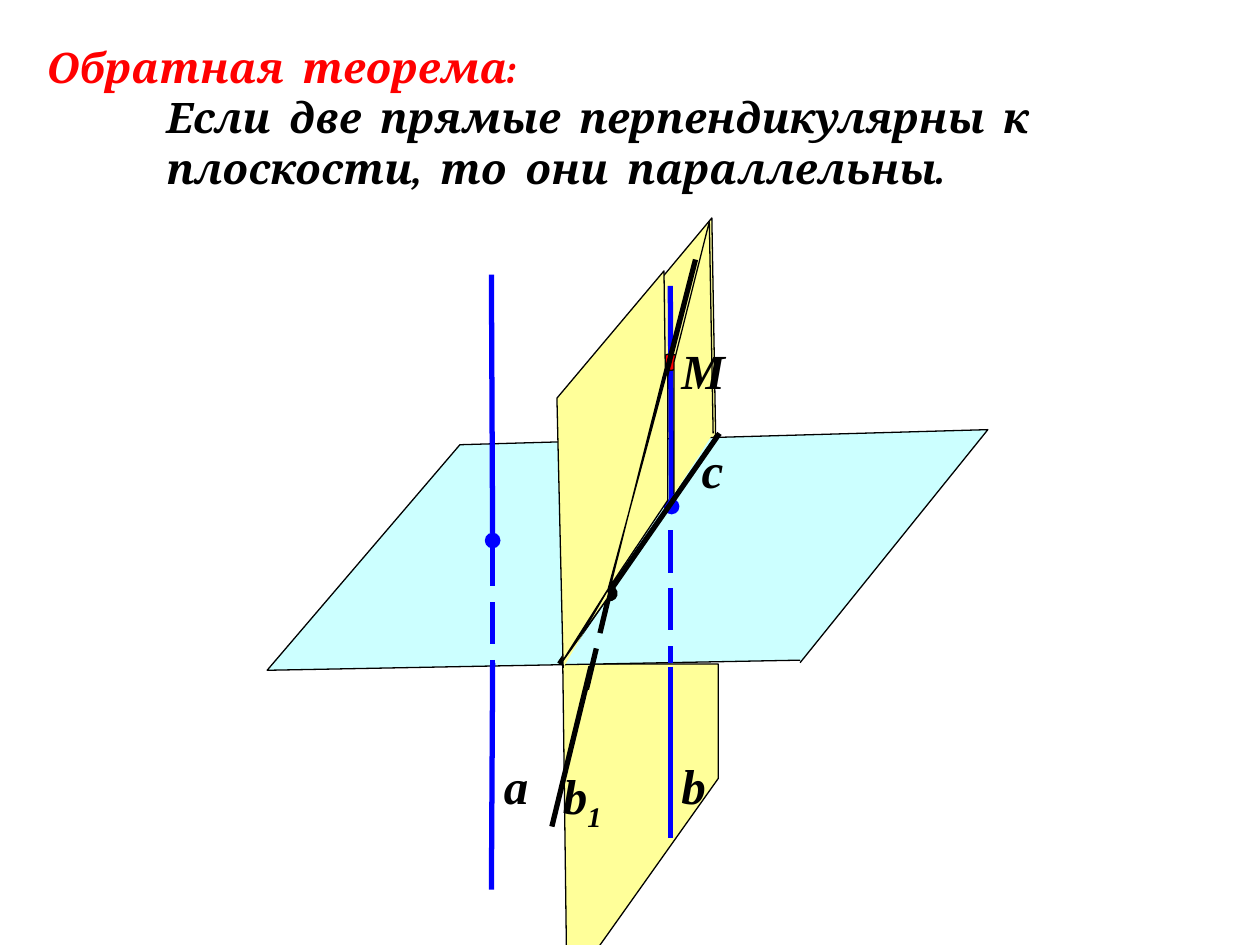
from dataclasses import dataclass

from lxml.etree import SubElement
from pptx import Presentation
from pptx.dml.color import RGBColor
from pptx.enum.dml import MSO_LINE
from pptx.enum.shapes import MSO_CONNECTOR, MSO_SHAPE
from pptx.enum.text import MSO_ANCHOR, MSO_AUTO_SIZE, PP_ALIGN
from pptx.oxml.ns import qn
from pptx.util import Inches, Pt

BLACK = RGBColor(0x00, 0x00, 0x00)
BLUE = RGBColor(0x00, 0x00, 0xFF)
RED = RGBColor(0xFF, 0x00, 0x00)
YELLOW = RGBColor(0xFF, 0xFF, 0x99)
CYAN = RGBColor(0xCC, 0xFF, 0xFF)

COLUMNS, ROWS = 1000, 750
CELL = Inches(10) // COLUMNS
WORD_GAP = 530

Point = tuple[int, int]


@dataclass
class Plane:
    corners: list[Point]
    color: RGBColor


@dataclass
class Line:
    start: Point
    end: Point
    color: RGBColor
    dashed: bool = False
    dotted_end: bool = False


@dataclass
class Marker:
    corner: Point
    size: Point
    color: RGBColor


@dataclass
class Label:
    corner: Point
    size: Point
    letter: str
    index: str = ""


FIGURE = [
    Plane([(447, 525), (568, 345), (565, 173), (444, 318), (450, 787),
           (570, 618), (570, 527), (445, 527)], YELLOW),
    Plane([(635, 524), (212, 532), (365, 353), (784, 341), (635, 526)], CYAN),
    Line((532, 227), (533, 402), BLUE, dotted_end=True),
    Line((532, 421), (532, 526), BLUE, dashed=True),
    Line((532, 529), (532, 665), BLUE),
    Line((390, 218), (391, 429), BLUE, dotted_end=True),
    Line((391, 526), (390, 706), BLUE),
    Line((391, 432), (391, 573), BLUE, dashed=True),
    Marker((524, 281), (16, 13), RED),
    Line((552, 206), (484, 471), BLACK, dotted_end=True),
    Line((484, 470), (465, 549), BLACK, dashed=True),
    Line((469, 529), (438, 656), BLACK),
    Line((571, 344), (444, 527), BLACK),
    Plane([(447, 530), (442, 316), (527, 215), (528, 292), (482, 475),
           (445, 527), (483, 467), (530, 397), (530, 293), (482, 470)], YELLOW),
    Plane([(566, 344), (563, 176), (535, 287), (535, 392)], YELLOW),
]

LABELS = [
    Label((390, 595), (40, 57), "а"),
    Label((531, 595), (40, 57), "b"),
    Label((437, 603), (53, 57), "b", "1"),
    Label((531, 265), (55, 57), "M"),
    Label((547, 344), (37, 57), "c"),
]


def cells(*counts: int) -> list[int]:
    return [count * CELL for count in counts]


def paint(shape, color: RGBColor) -> None:
    shape.shadow.inherit = False
    shape.fill.solid()
    shape.fill.fore_color.rgb = color
    shape.line.color.rgb = BLACK
    shape.line.width = Pt(0.75)


def add_plane(shapes, plane: Plane) -> None:
    first, *others = plane.corners
    outline = shapes.build_freeform(*first, scale=CELL)
    outline.add_line_segments(others, close=False)
    paint(outline.convert_to_shape(), plane.color)


def add_line(shapes, line: Line) -> None:
    segment = shapes.add_connector(
        MSO_CONNECTOR.STRAIGHT, *cells(*line.start, *line.end))
    segment.line.color.rgb = line.color
    segment.line.width = Pt(3)
    if line.dashed:
        segment.line.dash_style = MSO_LINE.LONG_DASH
    if line.dotted_end:
        SubElement(segment.line._get_or_add_ln(), qn("a:tailEnd"), type="oval")
    SubElement(segment._element.spPr, qn("a:effectLst"))


def add_marker(shapes, marker: Marker) -> None:
    paint(shapes.add_shape(
        MSO_SHAPE.OVAL, *cells(*marker.corner, *marker.size)), marker.color)


def add_run(paragraph, text: str, face: str, size: int, color: RGBColor):
    run = paragraph.add_run()
    run.text = text
    font = run.font
    font.name, font.size = face, Pt(size)
    font.bold = font.italic = True
    font.color.rgb = color
    return run


def add_label(shapes, label: Label) -> None:
    frame = shapes.add_textbox(*cells(*label.corner, *label.size)).text_frame
    frame.word_wrap = False
    frame.auto_size = MSO_AUTO_SIZE.SHAPE_TO_FIT_TEXT
    name = frame.paragraphs[0]
    add_run(name, label.letter, "Times New Roman", 28, BLACK)
    if label.index:
        index = add_run(name, label.index, "Times New Roman", 28, BLACK)
        index.font._element.set("baseline", "-25000")


def add_spaced_words(paragraph, text: str, color: RGBColor) -> None:
    for position, word in enumerate(text.split()):
        if position:
            gap = add_run(paragraph, " ", "Cambria", 24, color)
            gap.font._element.set("spc", str(WORD_GAP))
        add_run(paragraph, word, "Cambria", 24, color)


def write_theorem(title) -> None:
    title.left, title.top, title.width, title.height = cells(27, 28, 929, 130)
    frame = title.text_frame
    frame.word_wrap = True
    frame.auto_size = MSO_AUTO_SIZE.NONE
    frame.vertical_anchor = MSO_ANCHOR.TOP
    heading, statement = frame.paragraphs[0], frame.add_paragraph()
    for paragraph in (heading, statement):
        paragraph.alignment = PP_ALIGN.LEFT
        paragraph.line_spacing = 1.0
    margin = statement._p.get_or_add_pPr()
    margin.set("marL", str(95 * CELL))
    margin.set("indent", "0")
    add_spaced_words(heading, "Обратная теорема:", RED)
    add_spaced_words(
        statement,
        "Если две прямые перпендикулярны к плоскости, то они параллельны.",
        BLACK)


def main() -> None:
    deck = Presentation()
    deck.slide_width, deck.slide_height = cells(COLUMNS, ROWS)
    slide = deck.slides.add_slide(deck.slide_layouts[5])
    write_theorem(slide.shapes.title)
    draw = {Plane: add_plane, Line: add_line, Marker: add_marker}
    for part in FIGURE:
        draw[type(part)](slide.shapes, part)
    for label in LABELS:
        add_label(slide.shapes, label)
    deck.save("out.pptx")


if __name__ == "__main__":
    main()
